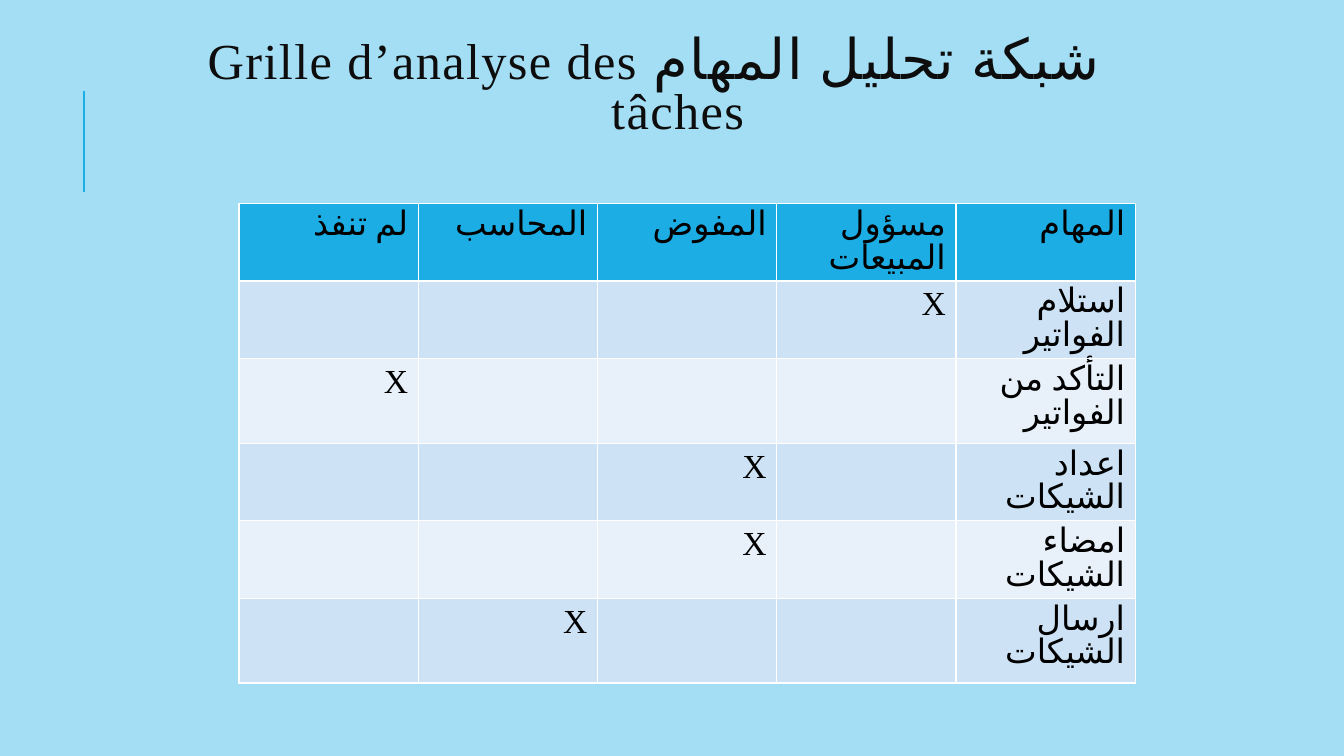
"""Build the task analysis grid slide."""
from dataclasses import dataclass

import lxml.etree
import pptx
import pptx.dml.color
import pptx.enum.lang
import pptx.enum.shapes
import pptx.enum.text
import pptx.oxml.ns
import pptx.util

Inches = pptx.util.Inches
Align = pptx.enum.text.PP_ALIGN
Lang = pptx.enum.lang.MSO_LANGUAGE_ID
FONT = "Times New Roman"
COLORS = {
    "background": "A4DEF4",
    "accent": "1CADE4",
    "band_dark": "CDE3F5",
    "band_light": "E8F1FA",
    "title": "0D0D0D",
    "text": "000000",
}
HEADERS = ["لم تنفذ", "المحاسب", "المفوض", "مسؤول المبيعات", "المهام"]


@dataclass
class Task:
    name: str
    marked: int
    height: float


TASKS = [
    Task("استلام الفواتير", 3, 0.77),
    Task("التأكد من الفواتير", 0, 0.84),
    Task("اعداد الشيكات", 2, 0.77),
    Task("امضاء الشيكات", 2, 0.77),
    Task("ارسال الشيكات", 1, 0.84),
]


def rgb(name: str) -> pptx.dml.color.RGBColor:
    return pptx.dml.color.RGBColor.from_string(COLORS[name])


def format_run(r, size: int, color: str, lang: Lang = Lang.ARABIC_ALGERIA) -> None:
    r.font.name = FONT
    r.font.size = pptx.util.Pt(size)
    r.font.bold = False
    r.font.color.rgb = rgb(color)
    r.font.language_id = lang


def format_paragraph(p, align: Align, spacing: float) -> None:
    p.alignment = align
    p.line_spacing = spacing
    p.space_before = pptx.util.Pt(0)
    p._p.get_or_add_pPr().set("rtl", "1")


def add_accent_line(s) -> None:
    x = Inches(0.83)
    line = s.shapes.add_connector(
        pptx.enum.shapes.MSO_CONNECTOR.STRAIGHT, x, Inches(1.9), x, Inches(0.9))
    line.line.color.rgb = rgb("accent")
    line.line.width = pptx.util.Pt(1.5)
    lxml.etree.SubElement(line._element.spPr, pptx.oxml.ns.qn("a:effectLst"))


def add_title(s) -> None:
    sp = s.shapes.title
    sp.left, sp.top = Inches(1.35), Inches(0.36)
    sp.width, sp.height = Inches(10.63), Inches(1.02)
    tf = sp.text_frame
    tf.auto_size = pptx.enum.text.MSO_AUTO_SIZE.NONE
    tf.word_wrap = True
    tf.vertical_anchor = pptx.enum.text.MSO_ANCHOR.MIDDLE
    tf.text = "شبكة تحليل المهام "
    p = tf.paragraphs[0]
    p.add_run().text = "Grille d’analyse des tâches "
    format_paragraph(p, Align.CENTER, 0.8)
    p._p.get_or_add_pPr().set("indent", str(Inches(0.34)))
    arabic, french = p.runs
    format_run(arabic, 40, "title")
    format_run(french, 36, "title", Lang.FRENCH)
    for r in p.runs:
        r.font._element.set("spc", "100")


def fill_row(table, row: int, texts: list[str], fill: str, height: float) -> None:
    table.rows[row].height = Inches(height)
    for col, text in enumerate(texts):
        cell = table.cell(row, col)
        cell.fill.solid()
        cell.fill.fore_color.rgb = rgb(fill)
        cell.text_frame.text = text
        p = cell.text_frame.paragraphs[0]
        format_paragraph(p, Align.RIGHT, 1.0)
        for r in p.runs:
            format_run(r, 24, "text")


def add_grid(s) -> None:
    header_height = 0.76
    total = header_height + sum(task.height for task in TASKS)
    table = s.shapes.add_table(
        len(TASKS) + 1, len(HEADERS),
        Inches(2.37), Inches(2.02), Inches(8.89), Inches(total)).table
    fill_row(table, 0, HEADERS, "accent", header_height)
    for row, task in enumerate(TASKS, start=1):
        marks = ["X" if col == task.marked else "" for col in range(len(HEADERS) - 1)]
        fill = "band_dark" if row % 2 else "band_light"
        fill_row(table, row, marks + [task.name], fill, task.height)


def main() -> None:
    prs = pptx.Presentation()
    prs.slide_width, prs.slide_height = Inches(13.33), Inches(7.5)
    s = prs.slides.add_slide(prs.slide_layouts[5])
    s.background.fill.solid()
    s.background.fill.fore_color.rgb = rgb("background")
    add_accent_line(s)
    add_title(s)
    add_grid(s)
    prs.save("out.pptx")


if __name__ == "__main__":
    main()
